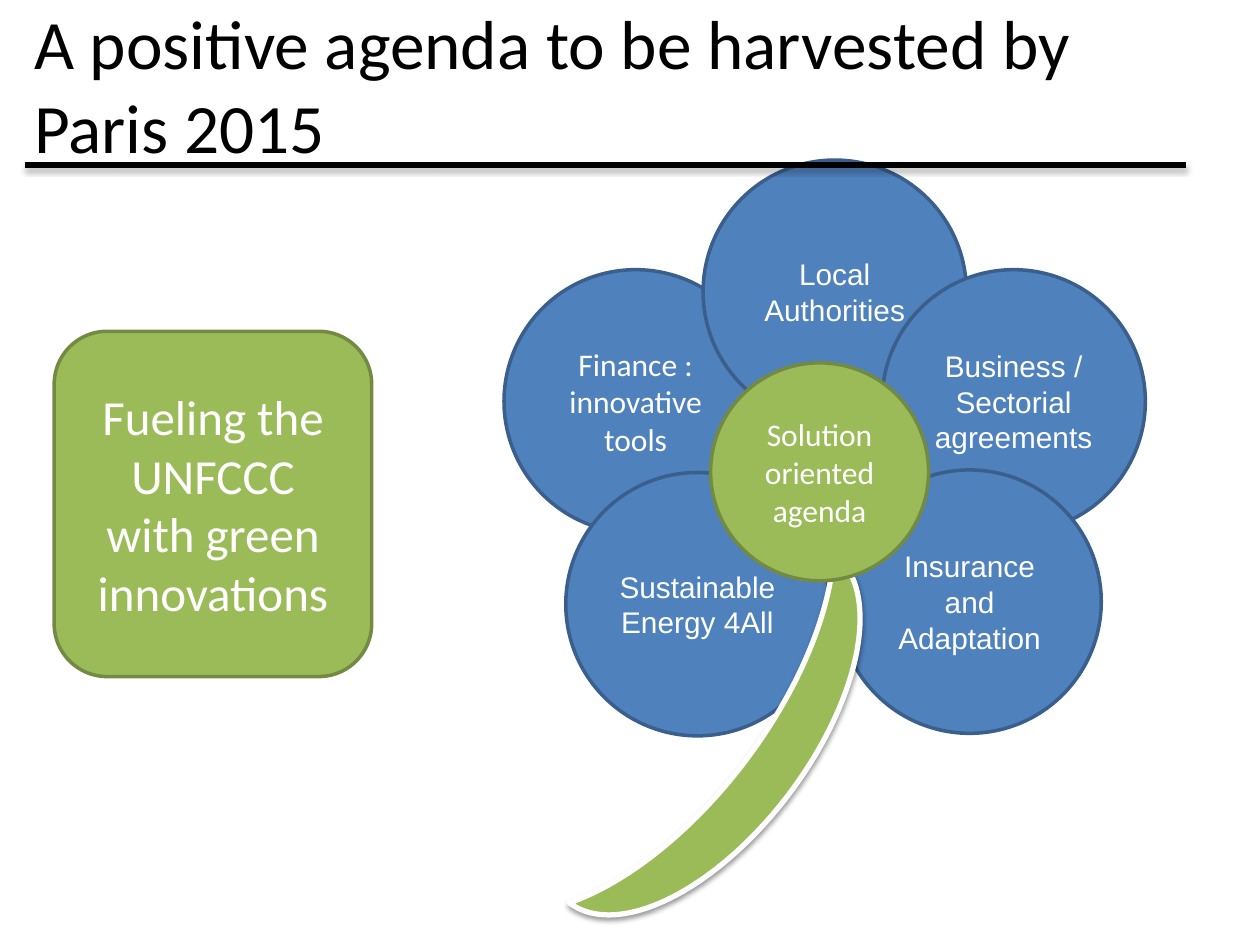
from typing import NamedTuple

from lxml import etree
from pptx import Presentation
from pptx.dml.color import RGBColor
from pptx.enum import shapes, text
from pptx.oxml import ns
from pptx.util import Inches, Pt

BLACK = RGBColor(0x00, 0x00, 0x00)
WHITE = RGBColor(0xFF, 0xFF, 0xFF)
BLUE = RGBColor(0x4F, 0x81, 0xBD)
DARK_BLUE = RGBColor(0x3A, 0x5F, 0x8C)
GREEN = RGBColor(0x9B, 0xBB, 0x59)
DARK_GREEN = RGBColor(0x73, 0x8A, 0x42)

PETAL_SIZE = 2.09
CENTRE_SIZE = 1.73


class Petal(NamedTuple):
    label: str
    left: float
    top: float
    font: str = "Arial"
    size: float = 17


PETALS = [
    Petal("Finance : innovative tools", 4, 2.14, "Calibri", 18),
    Petal("Local Authorities", 5.58, 1.27),
    Petal("Business / Sectorial agreements", 7, 2.14),
    Petal("Insurance and Adaptation", 6.65, 3.73),
    Petal("Sustainable Energy 4All", 4.49, 3.75),
]


def format_text(frame, label: str, font: str, size: float, color: RGBColor, align) -> None:
    frame.text = label
    frame.word_wrap = True
    frame.vertical_anchor = text.MSO_ANCHOR.MIDDLE
    paragraph = frame.paragraphs[0]
    paragraph.alignment = align
    run_font = paragraph.runs[0].font
    run_font.name, run_font.size = font, Pt(size)
    run_font.color.rgb = color


def add_filled(slide, kind, left: float, top: float, width: float, height: float,
               fill: RGBColor, outline: RGBColor, line_width: float = 2):
    shape = slide.shapes.add_shape(
        kind, Inches(left), Inches(top), Inches(width), Inches(height))
    shape.shadow.inherit = False
    shape.fill.solid()
    shape.fill.fore_color.rgb = fill
    shape.line.color.rgb = outline
    shape.line.width = Pt(line_width)
    return shape


def add_labelled(slide, kind, left: float, top: float, width: float, height: float,
                 fill: RGBColor, outline: RGBColor, label: str, font: str, size: float) -> None:
    shape = add_filled(slide, kind, left, top, width, height, fill, outline)
    format_text(shape.text_frame, label, font, size, WHITE, text.PP_ALIGN.CENTER)


def add_drop_shadow(shape, distance: float, opacity: int) -> None:
    properties = shape._element.spPr
    for effects in properties.findall(ns.qn("a:effectLst")):
        properties.remove(effects)
    effects = etree.SubElement(properties, ns.qn("a:effectLst"))
    shadow = etree.SubElement(
        effects, ns.qn("a:outerShdw"), blurRad=str(Pt(3.1)), dist=str(Pt(distance)),
        dir="5400000", rotWithShape="0")
    color = etree.SubElement(shadow, ns.qn("a:srgbClr"), val=str(BLACK))
    etree.SubElement(color, ns.qn("a:alpha"), val=str(opacity * 1000))


def main() -> None:
    presentation = Presentation()
    presentation.slide_width, presentation.slide_height = Inches(10), Inches(7.5)
    slide = presentation.slides.add_slide(presentation.slide_layouts[5])

    # Title
    title = slide.shapes.title
    title.left, title.top = Inches(0.17), Inches(0.04)
    title.width, title.height = Inches(9), Inches(1.25)
    format_text(title.text_frame, "A positive agenda to be harvested by Paris 2015",
                "Calibri", 39.6, BLACK, text.PP_ALIGN.LEFT)
    title.text_frame.auto_size = text.MSO_AUTO_SIZE.NONE

    # Petals
    ellipse = shapes.MSO_SHAPE.OVAL
    for petal in PETALS:
        add_labelled(slide, ellipse, petal.left, petal.top, PETAL_SIZE, PETAL_SIZE,
                     BLUE, DARK_BLUE, petal.label, petal.font, petal.size)

    # Stem and flower centre
    stem = add_filled(slide, shapes.MSO_SHAPE.MOON, 5.48, 4.3, 0.87, 3.48, GREEN, WHITE, 3)
    stem.rotation = 217.1
    add_drop_shadow(stem, 1.6, 38)
    add_labelled(slide, ellipse, 5.64, 2.88, CENTRE_SIZE, CENTRE_SIZE,
                 GREEN, DARK_GREEN, "Solution oriented agenda", "Calibri", 18)

    # Message box
    add_labelled(slide, shapes.MSO_SHAPE.ROUNDED_RECTANGLE, 0.43, 2.63, 2.52, 2.74,
                 GREEN, DARK_GREEN, "Fueling the UNFCCC with green innovations", "Calibri", 28)

    # Rule under the title
    rule = slide.shapes.add_connector(
        shapes.MSO_CONNECTOR.STRAIGHT, Inches(0.2), Inches(1.31), Inches(9.41), Inches(1.31))
    rule.line.color.rgb = BLACK
    rule.line.width = Pt(3)
    add_drop_shadow(rule, 1.8, 35)

    presentation.save("out.pptx")


if __name__ == "__main__":
    main()
